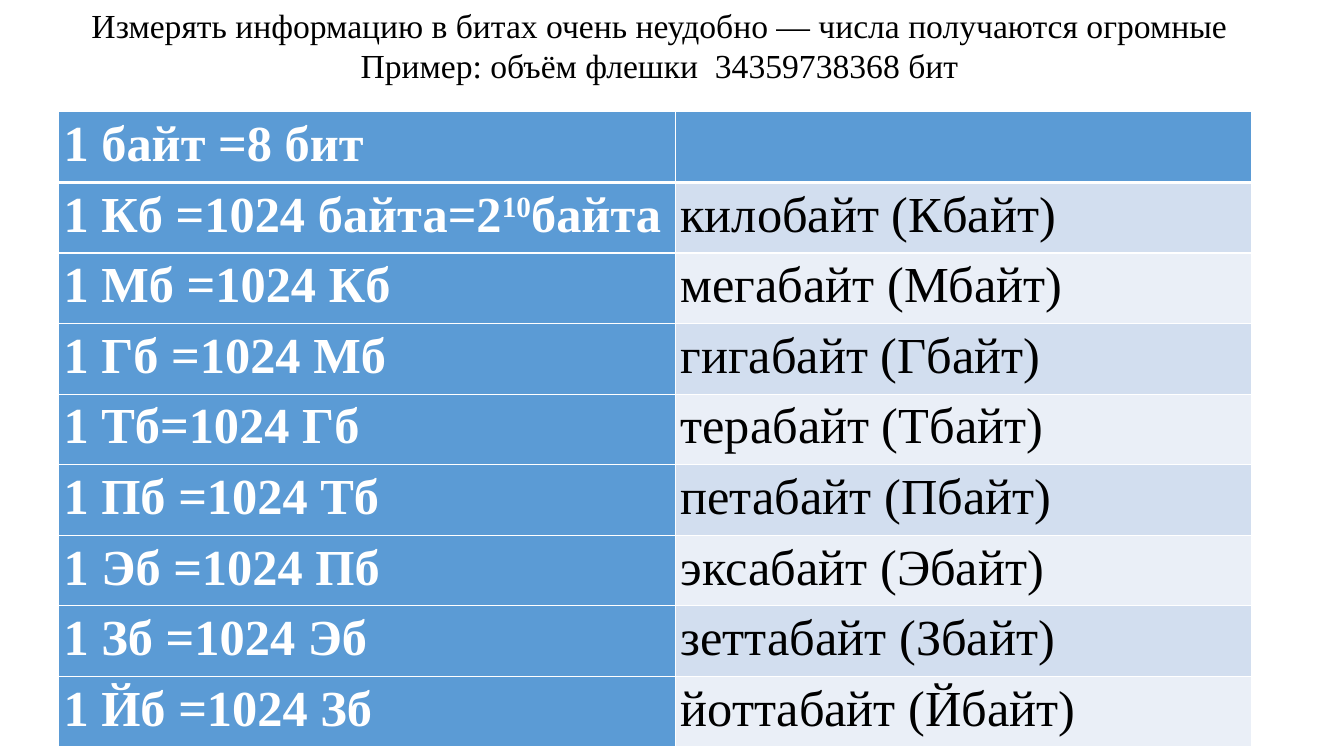
import pptx
import pptx.dml.color
import pptx.enum.text
import pptx.oxml
import pptx.oxml.ns
import pptx.util
from pptx.util import Inches

FONT = "Times New Roman"
BLUE, WHITE, BLACK = "5B9BD5", "FFFFFF", "000000"
BANDS = ["EAEFF7", "D2DEEF"]
TITLE = [
    "Измерять информацию в битах очень неудобно — числа получаются огромные",
    "Пример: объём флешки  34359738368 бит",
]
# Each row: runs of the left cell, text of the right cell
UNITS = [
    (["1 байт =8 бит"], ""),
    (["1 Кб =1024 байта=2", "10", "байта"], "килобайт (Кбайт)"),
    (["1 Мб =1024 Кб"], "мегабайт (Мбайт)"),
    (["1 Гб =1024 Мб"], "гигабайт (Гбайт)"),
    (["1 Тб=1024 Гб"], "терабайт (Тбайт)"),
    (["1 Пб =1024 Тб"], "петабайт (Пбайт)"),
    (["1 Эб =1024 Пб"], "эксабайт (Эбайт)"),
    (["1 Зб =1024 Эб"], "зеттабайт (Збайт)"),
    (["1 Йб =1024 Зб"], "йоттабайт (Йбайт)"),
]


def paint(color, code):
    color.rgb = pptx.dml.color.RGBColor.from_string(code)


def style(run, size, code, bold=False):
    run.font.name = FONT
    run.font.size = pptx.util.Pt(size)
    run.font.bold = bold
    paint(run.font.color, code)


def add_title(slide):
    box = slide.shapes.add_textbox(Inches(0.31), Inches(0), Inches(12.46), Inches(0.91))
    frame = box.text_frame
    frame.word_wrap = True
    frame.text = "\n".join(TITLE)
    for para in frame.paragraphs:
        para.alignment = pptx.enum.text.PP_ALIGN.CENTER
        for run in para.runs:
            style(run, 24, BLACK)


def add_edge(cell, side, width):
    props = cell._tc.get_or_add_tcPr()
    props.append(pptx.oxml.parse_xml(
        f'<a:ln{side} {pptx.oxml.ns.nsdecls("a")} w="{pptx.util.Pt(width)}">'
        f'<a:solidFill><a:srgbClr val="{WHITE}"/></a:solidFill></a:ln{side}>'))


def fill_cell(cell, parts, back, fore, bold, top, bottom):
    # Borders come before the fill
    for side, width in zip("LRTB", (1, 1, top, bottom)):
        add_edge(cell, side, width)
    cell.fill.solid()
    paint(cell.fill.fore_color, back)
    cell.margin_left = cell.margin_right = Inches(0.05)
    cell.margin_top = cell.margin_bottom = Inches(0.05)
    # The second part is a power
    para = cell.text_frame.paragraphs[0]
    for spot, part in enumerate(parts):
        run = para.add_run()
        run.text = part
        style(run, 36, fore, bold)
        if spot == 1:
            run.font._element.set("baseline", "30000")


def add_units(slide):
    high = Inches(0.7)
    table = slide.shapes.add_table(
        len(UNITS), 2, Inches(0.58), Inches(1.11), Inches(11.83), high * len(UNITS)).table
    for col, width in zip(table.columns, (6.12, 5.71)):
        col.width = Inches(width)
    for row, (left, right) in enumerate(UNITS):
        table.rows[row].height = high
        # A thick line divides the header from the body
        top = 3 if row == 1 else 1
        bottom = 3 if row == 0 else 1
        band = BANDS[row % 2] if row else BLUE
        fill_cell(table.cell(row, 0), left, BLUE, WHITE, True, top, bottom)
        fill_cell(table.cell(row, 1), [right] if right else [], band, BLACK, False, top, bottom)


def main():
    deck = pptx.Presentation()
    deck.slide_width, deck.slide_height = Inches(13.33), Inches(7.5)
    slide = deck.slides.add_slide(deck.slide_layouts[6])
    add_units(slide)
    add_title(slide)
    deck.save("out.pptx")


if __name__ == "__main__":
    main()
